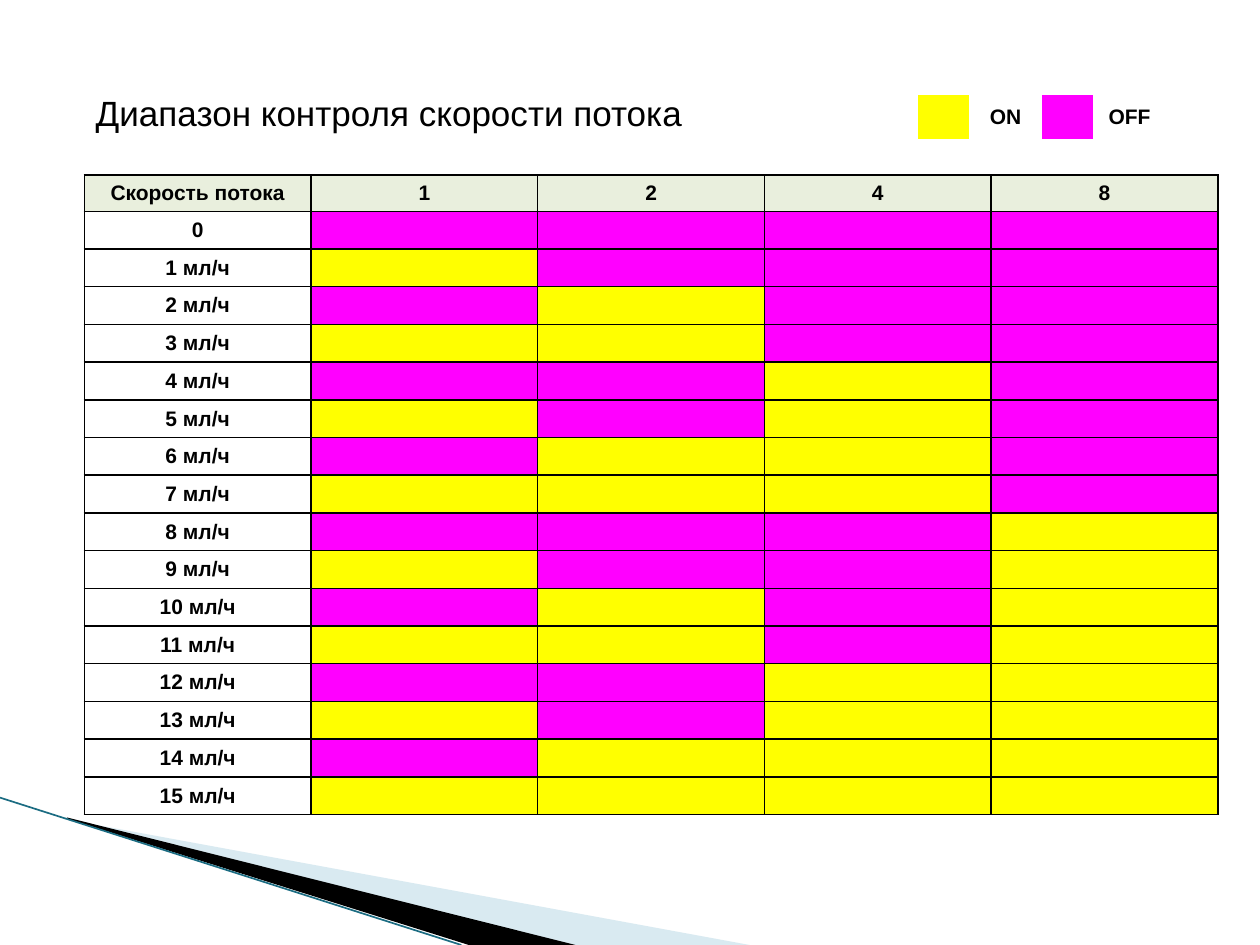
"""Build the slide with the flow rate control range table."""
import pptx
import pptx.util
import pptx.dml.color
import pptx.enum.shapes
import pptx.enum.text
import pptx.oxml
import pptx.oxml.ns
from pptx.util import Cm, Pt

HUES = {"on": "FFFF00", "off": "FF00FF", "head": "E9EFDD", "ink": "000000",
        "pale": "A0CBDC", "teal": "1B6C82"}
TITLE = "Диапазон контроля скорости потока"
HEAD = "Скорость потока"
UNIT = "мл/ч"
BITS = [1, 2, 4, 8]
RATES = range(16)
KEY = [("on", ""), (None, "ON"), ("off", ""), (None, "OFF")]
WEDGES = [
    ("pale", 40, [(1.4, 16.53), (15.11, 19.05), (11.58, 19.05), (1.4, 16.51)]),
    ("ink", 100, [(1.35, 16.48), (11.6, 19.05), (9.45, 19.05), (1.37, 16.51)]),
]
EDGE = [(0, 16.08), (9.3, 19.05)]


def hue(name):
    return pptx.dml.color.RGBColor.from_string(HUES[name])


def node(home, tag, **attrs):
    item = pptx.oxml.ns.qn(tag)
    item = home.makeelement(item, attrs)
    home.append(item)
    return item


def paint(fill, name):
    if name:
        fill.solid()
        fill.fore_color.rgb = hue(name)
    else:
        fill.background()


def style(par, size, bold=False):
    par.font.name = "Arial"
    par.font.size = Pt(size)
    par.font.bold = bold
    par.font.color.rgb = hue("ink")


def border(cell, ruled):
    props = cell._tc.get_or_add_tcPr()
    for spot, side in enumerate(("a:lnL", "a:lnR", "a:lnT", "a:lnB")):
        line = node(props, side, w=str(Pt(1)))
        props.insert(spot, line)
        if ruled:
            node(node(line, "a:solidFill"), "a:srgbClr", val=HUES["ink"])
        else:
            node(line, "a:noFill")


def grid(slide, rows, left, top, wides, highs, pad, ruled):
    frame = slide.shapes.add_table(len(rows), len(wides), Cm(left), Cm(top),
                                   Cm(sum(wides)), Cm(sum(highs)))
    table = frame.table
    table.first_row = table.horz_banding = False
    for col, wide in zip(table.columns, wides):
        col.width = Cm(wide)
    for row, high, data in zip(table.rows, highs, rows):
        row.height = Cm(high)
        for cell, (name, text) in zip(row.cells, data):
            cell.text = text
            cell.vertical_anchor = pptx.enum.text.MSO_ANCHOR.MIDDLE
            cell.margin_left = cell.margin_right = Cm(pad)
            cell.margin_top = cell.margin_bottom = Cm(0.12 if text else 0)
            par = cell.text_frame.paragraphs[0]
            par.alignment = pptx.enum.text.PP_ALIGN.CENTER
            style(par, 12, True)
            paint(cell.fill, name)
            border(cell, ruled)


def wedge(slide, name, alpha, spots):
    spots = [(Cm(x), Cm(y)) for x, y in spots]
    pen = slide.shapes.build_freeform(*spots[0])
    pen.add_line_segments(spots[1:], close=True)
    shape = pen.convert_to_shape()
    shape.shadow.inherit = False
    paint(shape.fill, name)
    shape.line.fill.background()
    if alpha < 100:
        tint = shape._element.spPr.find(".//" + pptx.oxml.ns.qn("a:srgbClr"))
        node(tint, "a:alpha", val=str(alpha * 1000))


def main():
    deck = pptx.Presentation()
    deck.slide_width, deck.slide_height = Cm(25.4), Cm(19.05)
    slide = deck.slides.add_slide(deck.slide_layouts[6])

    for item in WEDGES:
        wedge(slide, *item)
    ends = [Cm(n) for spot in EDGE for n in spot]
    kind = pptx.enum.shapes.MSO_CONNECTOR.STRAIGHT
    edge = slide.shapes.add_connector(kind, *ends)
    edge.line.color.rgb = hue("teal")
    edge.line.width = Pt(0.95)
    node(edge._element.spPr, "a:effectLst")

    rows = [[("head", str(text)) for text in [HEAD] + BITS]]
    for rate in RATES:
        label = f"{rate} {UNIT}" if rate else "0"
        rows.append([(None, label)] +
                    [("on" if rate & bit else "off", "") for bit in BITS])
    highs = [0.73] + [0.76] * len(RATES)
    grid(slide, rows, 1.7, 3.53, [4.57] * 5, highs, 0.46, True)
    grid(slide, [KEY], 18.5, 1.92, [1.04, 1.46] * 2, [0.89], 0.1, False)

    box = slide.shapes.add_textbox(Cm(1.68), Cm(1.73), Cm(13.6), Cm(1.11))
    box.text_frame.word_wrap = True
    par = box.text_frame.paragraphs[0]
    par.text = TITLE
    style(par, 20)
    deck.save("out.pptx")


if __name__ == "__main__":
    main()
